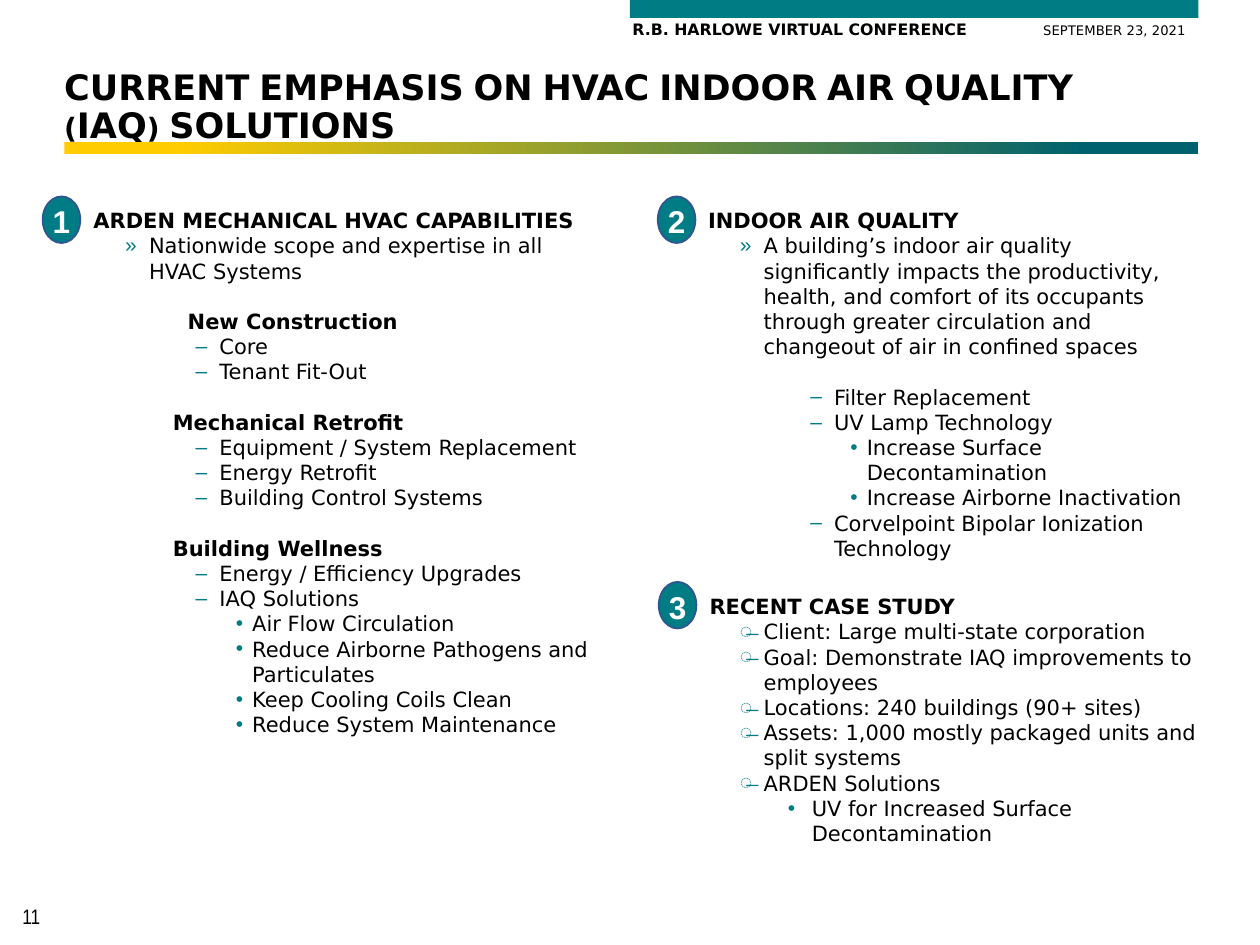
from lxml.etree import SubElement
from pptx import Presentation
from pptx.dml.color import RGBColor
from pptx.enum.shapes import MSO_SHAPE as Form
from pptx.enum.text import MSO_ANCHOR as Anchor, MSO_AUTO_SIZE as Fit, PP_ALIGN as Align
from pptx.oxml.ns import qn
from pptx.util import Cm, Pt

LINE = Pt(14.4)

# kind: level, left margin, hang (cm), bullet, bold
KINDS = {
    "head": (1, 0, 0, None, True),
    "scope": (1, 1.12, 0.48, "»", False),
    "first": (1, 1.9, 0, None, True),
    "group": (1, 1.6, 0, None, True),
    "dash": (2, 2.54, 0.48, "‒", False),
    "dot": (3, 3.2, 0.33, "•", False),
    "fact": (1, 1.09, 0.48, "̶", False),
    "note": (2, 2.06, 0.48, "•", False),
}

# A third entry of True leaves one line free above the paragraph.
SKILLS = [
    ("head", "ARDEN MECHANICAL HVAC CAPABILITIES"),
    ("scope", "Nationwide scope and expertise in all HVAC Systems"),
    ("first", "New Construction", True),
    ("dash", "Core"),
    ("dash", "Tenant Fit-Out"),
    ("group", "Mechanical Retrofit", True),
    ("dash", "Equipment / System Replacement"),
    ("dash", "Energy Retrofit"),
    ("dash", "Building Control Systems"),
    ("group", "Building Wellness", True),
    ("dash", "Energy / Efficiency Upgrades"),
    ("dash", "IAQ Solutions"),
    ("dot", "Air Flow Circulation"),
    ("dot", "Reduce Airborne Pathogens and Particulates"),
    ("dot", "Keep Cooling Coils Clean"),
    ("dot", "Reduce System Maintenance"),
]
AIR = [
    ("head", "INDOOR AIR QUALITY"),
    ("scope", "A building’s indoor air quality significantly impacts the "
              "productivity, health, and comfort of its occupants through "
              "greater circulation and changeout of air in confined spaces"),
    ("dash", "Filter Replacement", True),
    ("dash", "UV Lamp Technology"),
    ("dot", "Increase Surface Decontamination"),
    ("dot", "Increase Airborne Inactivation"),
    ("dash", "Corvelpoint Bipolar Ionization Technology"),
]
CASE = [
    ("head", "RECENT CASE STUDY"),
    ("fact", "Client: Large multi-state corporation"),
    ("fact", "Goal: Demonstrate IAQ improvements to employees"),
    ("fact", "Locations: 240 buildings (90+ sites)"),
    ("fact", "Assets: 1,000 mostly packaged units and split systems"),
    ("fact", "ARDEN Solutions"),
    ("note", "UV for Increased Surface Decontamination"),
]


def color(code):
    return RGBColor.from_string(code)


class Deck:
    """Style and current slide."""
    face, ink, teal, gold = "DejaVu Sans", "000000", "007C85", "FFCC00"
    deep, edge, white = "00616E", "325491", "FFFFFF"

    def __init__(self, slide):
        self.slide = slide
        self.marks = {p.placeholder_format.idx: p for p in slide.placeholders}

    def font(self, font, size, bold=False, ink=None, face=None):
        font.name, font.size, font.bold = face or self.face, Pt(size), bold
        font.color.rgb = color(ink or self.ink)

    def place(self, shape, box):
        shape.left, shape.top, shape.width, shape.height = map(Cm, box)

    def shape(self, form, box):
        shape = self.slide.shapes.add_shape(form, *map(Cm, box))
        shape.shadow.inherit = False
        shape.fill.solid()
        shape.fill.fore_color.rgb = color(self.teal)
        shape.line.fill.background()
        return shape

    def rule(self, box):
        fill = self.shape(Form.RECTANGLE, box).fill
        fill.gradient()
        fill.gradient_angle = 0
        for stop, spot, code in zip(fill.gradient_stops, (0.1, 0.9), (self.gold, self.deep)):
            stop.position = spot
            stop.color.rgb = color(code)

    def badge(self, text, x, y):
        shape = self.shape(Form.OVAL, (x, y, 0.76, 0.94))
        shape.line.color.rgb = color(self.edge)
        shape.line.width = Pt(1)
        frame = shape.text_frame
        frame.margin_left = frame.margin_right = frame.margin_bottom = 0
        frame.margin_top = Cm(0.06)
        frame.word_wrap, frame.vertical_anchor = False, Anchor.MIDDLE
        para = frame.paragraphs[0]
        para.text, para.alignment = text, Align.CENTER
        self.font(para.font, 18, True, self.white, "Arial")

    def text(self, box):
        frame = self.slide.shapes.add_textbox(*map(Cm, box)).text_frame
        frame.word_wrap = True
        return frame.paragraphs[0]

    def header(self, event, date):
        para = self.text((12.5, 0.28, 12.04, 0.64))
        tabs = SubElement(para._p.get_or_add_pPr(), qn("a:tabLst"))
        SubElement(tabs, qn("a:tab"), pos=str(Cm(8.28)), algn="l")
        for text, size, bold in ((event + "\t", 9, True), (date, 7.5, False)):
            run = para.add_run()
            run.text = text
            self.font(run.font, size, bold)

    def number(self, text):
        para = self.text((0, 18.08, 1.26, 0.76))
        para.text, para.alignment = text, Align.CENTER
        self.font(para.font, 12, face="Arial Narrow")

    def title(self, text, box):
        shape = self.marks[0]
        self.place(shape, box)
        frame = shape.text_frame
        frame.auto_size, frame.vertical_anchor = Fit.NONE, Anchor.BOTTOM
        para = frame.paragraphs[0]
        para.text, para.alignment, para.line_spacing = text, Align.LEFT, 0.9
        self.font(para.font, 20, True)
        para._p.pPr.find(qn("a:defRPr")).set("cap", "small")

    def list(self, mark, items, box):
        shape = self.marks[mark]
        self.place(shape, box)
        frame = shape.text_frame
        frame.auto_size, frame.vertical_anchor = Fit.NONE, Anchor.TOP
        for i, (kind, text, *gap) in enumerate(items):
            para = frame.add_paragraph() if i else frame.paragraphs[0]
            para.text = text
            self.item(para, *KINDS[kind], gap)

    def item(self, para, level, left, hang, sign, bold, gap):
        para.level, para.alignment = level, Align.LEFT
        para.line_spacing = LINE
        para.space_before = LINE if gap else Pt(0)
        props = para._p.get_or_add_pPr()
        props.set("marL", str(Cm(left)))
        props.set("indent", str(-Cm(hang)))
        if sign:
            tint = SubElement(props, qn("a:buClr"))
            SubElement(tint, qn("a:srgbClr"), val=self.teal)
            SubElement(props, qn("a:buChar"), char=sign)
        else:
            SubElement(props, qn("a:buNone"))
        self.font(para.font, 12, bold)

    def prune(self):
        """Remove the placeholders left empty."""
        for mark in self.marks.values():
            if not mark.text_frame.text:
                mark._element.getparent().remove(mark._element)


def main():
    show = Presentation()
    show.slide_width, show.slide_height = Cm(25.4), Cm(19.05)
    deck = Deck(show.slides.add_slide(show.slide_layouts[4]))
    deck.shape(Form.RECTANGLE, (12.7, 0, 11.46, 0.36))
    deck.header("R.B. HARLOWE VIRTUAL CONFERENCE", "SEPTEMBER 23, 2021")
    deck.number("11")
    deck.rule((1.3, 2.87, 22.86, 0.24))
    deck.title("CURRENT EMPHASIS ON HVAC INDOOR AIR QUALITY (IAQ) SOLUTIONS",
               (1.04, 0.58, 22.4, 2.49))
    deck.list(1, SKILLS, (1.63, 4.06, 10.77, 11.02))
    deck.list(2, AIR, (14.02, 4.06, 10.36, 7.44))
    deck.list(4, CASE, (14.05, 11.84, 10.77, 5.38))
    deck.badge("1", 0.86, 3.96)
    deck.badge("2", 13.26, 3.96)
    deck.badge("3", 13.28, 11.73)
    deck.prune()
    show.save("out.pptx")


if __name__ == "__main__":
    main()
